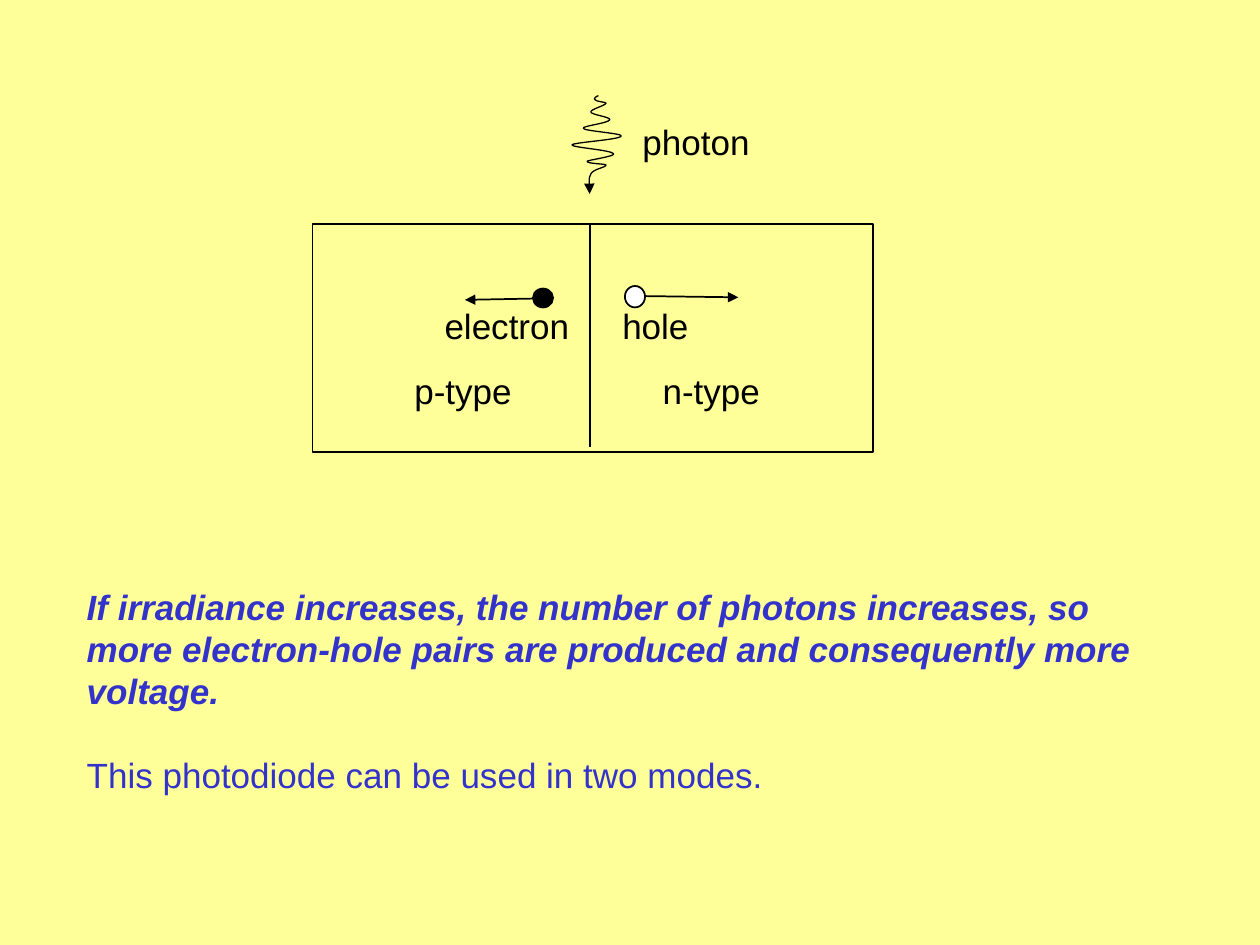
"""Build a slide showing a photon creating an electron-hole pair in a photodiode."""
from lxml import etree
from pptx import Presentation
from pptx.dml.color import RGBColor
from pptx.enum import shapes
from pptx.oxml import ns
from pptx.util import Inches, Pt

THEME = {
    "background": RGBColor.from_string("FFFF99"),
    "ink": RGBColor.from_string("000000"),
    "white": RGBColor.from_string("FFFFFF"),
    "accent": RGBColor.from_string("3333CC"),
    "font": "Arial",
    "size": Pt(20),
    "leading": Pt(24),
    "line": Pt(1),
    "wave": Pt(0.75),
}


def style_line(shape, width, arrow=False):
    shape.line.color.rgb = THEME["ink"]
    shape.line.width = width
    if arrow:
        etree.SubElement(shape.line._get_or_add_ln(), ns.qn("a:tailEnd"), type="triangle")


def add_text(box, color, paragraphs):
    frame = slide.shapes.add_textbox(*map(Inches, box)).text_frame
    frame.word_wrap = True
    for index, (content, paragraph_format, font_format) in enumerate(paragraphs):
        paragraph = frame.add_paragraph() if index else frame.paragraphs[0]
        run = paragraph.add_run()
        run.text = content
        run.font.color.rgb = THEME[color]
        font_format = {"name": THEME["font"], "size": THEME["size"], **font_format}
        paragraph_format = {"line_spacing": THEME["leading"], **paragraph_format}
        for target, values in ((run.font, font_format), (paragraph, paragraph_format)):
            for name, value in values.items():
                setattr(target, name, value)


presentation = Presentation()
presentation.slide_width = Inches(10)
presentation.slide_height = Inches(7.5)
slide = presentation.slides.add_slide(presentation.slide_layouts[6])
slide.background.fill.solid()
slide.background.fill.fore_color.rgb = THEME["background"]

connectors = [
    ((4.23, 2.37, 3.69, 2.38), True),
    ((5.12, 2.35, 5.86, 2.36), True),
    ((4.68, 1.78, 4.68, 3.55), False),
]
for ends, arrow in connectors:
    connector = slide.shapes.add_connector(shapes.MSO_CONNECTOR.STRAIGHT, *map(Inches, ends))
    style_line(connector, THEME["line"], arrow)
    etree.SubElement(connector._element.spPr, ns.qn("a:effectLst"))

bodies = [
    (shapes.MSO_SHAPE.RECTANGLE, (2.48, 1.78, 4.45, 1.81), None),
    (shapes.MSO_SHAPE.OVAL, (4.23, 2.29, 0.16, 0.15), "ink"),
    (shapes.MSO_SHAPE.OVAL, (4.96, 2.27, 0.16, 0.17), "white"),
]
for kind, box, fill in bodies:
    body = slide.shapes.add_shape(kind, *map(Inches, box))
    body.shadow.inherit = False
    style_line(body, THEME["line"])
    if fill:
        body.fill.solid()
        body.fill.fore_color.rgb = THEME[fill]
    else:
        body.fill.background()

wave_start = (4.75, 0.76)
wave_curves = [
    ((4.74, 0.76), (4.71, 0.78), (4.72, 0.79)),
    ((4.73, 0.81), (4.82, 0.81), (4.81, 0.82)),
    ((4.80, 0.84), (4.68, 0.87), (4.69, 0.89)),
    ((4.69, 0.91), (4.85, 0.93), (4.84, 0.95)),
    ((4.83, 0.98), (4.61, 1.00), (4.63, 1.02)),
    ((4.64, 1.04), (4.95, 1.06), (4.93, 1.08)),
    ((4.92, 1.11), (4.55, 1.13), (4.54, 1.15)),
    ((4.53, 1.17), (4.85, 1.19), (4.87, 1.22)),
    ((4.89, 1.24), (4.67, 1.27), (4.66, 1.28)),
    ((4.65, 1.30), (4.81, 1.30), (4.81, 1.31)),
    ((4.81, 1.33), (4.71, 1.34), (4.69, 1.38)),
    ((4.67, 1.42), (4.68, 1.51), (4.68, 1.54)),
]
builder = slide.shapes.build_freeform(*map(Inches, wave_start))
builder.add_line_segments(
    [tuple(map(Inches, point)) for curve in wave_curves for point in curve], close=False
)
photon = builder.convert_to_shape()
segments = list(photon._element.iter(ns.qn("a:lnTo")))
for first in range(0, len(segments), 3):
    outline = segments[first].getparent()
    curve = etree.SubElement(outline, ns.qn("a:cubicBezTo"))
    for segment in segments[first:first + 3]:
        curve.append(segment[0])
        outline.remove(segment)
photon.shadow.inherit = False
photon.fill.background()
style_line(photon, THEME["wave"], arrow=True)

labels = [
    ("photon", (5, 0.91, 1.65, 0.43)),
    ("electron", (3.43, 2.37, 1.5, 0.43)),
    ("hole", (4.84, 2.37, 1.02, 0.43)),
    ("p-type", (3.19, 2.88, 1.18, 0.43)),
    ("n-type", (5.16, 2.88, 1.18, 0.43)),
]
for label, box in labels:
    add_text(box, "ink", [(label, {}, {})])

add_text((0.59, 4.6, 8.9, 1.43), "accent", [
    ("If irradiance increases, the number of photons increases, so more electron-hole "
     "pairs are produced and consequently more voltage.",
     {}, {"bold": True, "italic": True}),
    ("This photodiode can be used in two modes.", {"space_before": THEME["leading"]}, {}),
])

presentation.save("out.pptx")
